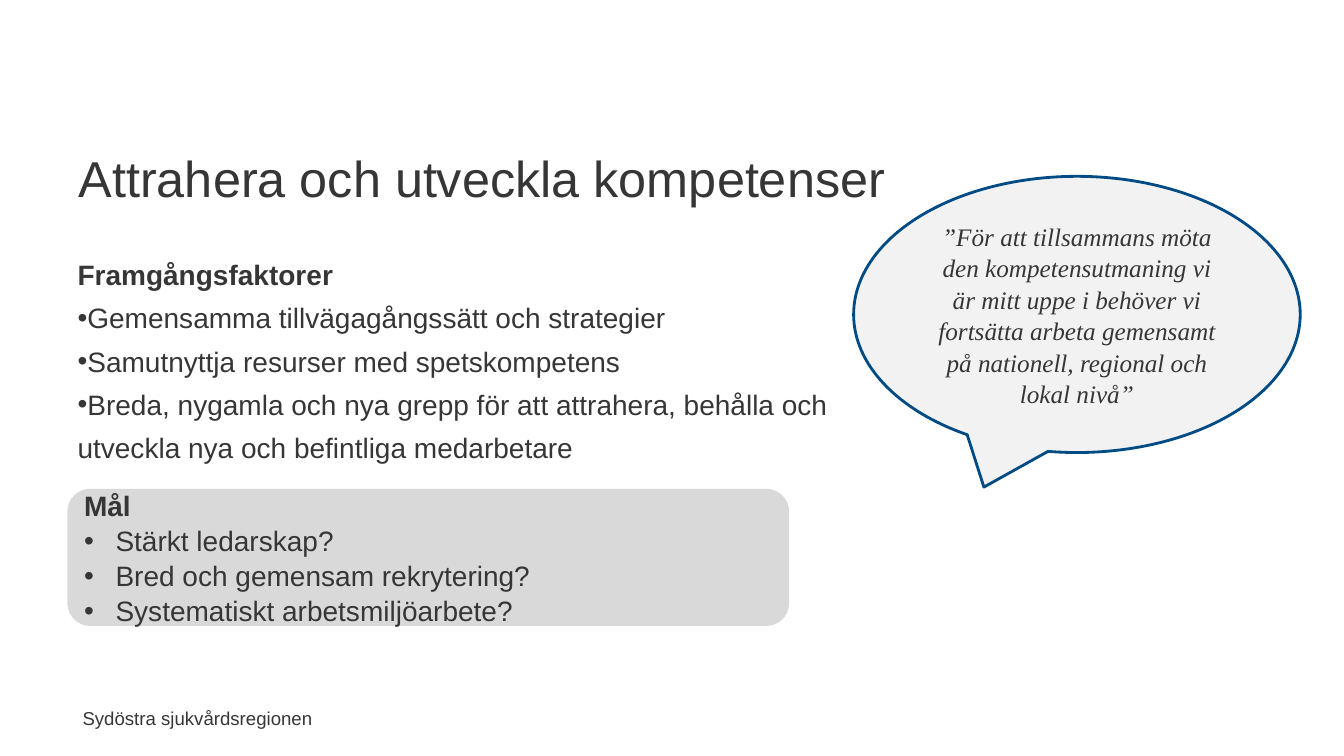
from dataclasses import dataclass
from typing import Optional

from lxml.etree import SubElement
from pptx import Presentation
from pptx.dml.color import RGBColor
from pptx.enum.shapes import MSO_SHAPE
from pptx.enum.text import MSO_ANCHOR, MSO_AUTO_SIZE, PP_ALIGN
from pptx.oxml.ns import qn
from pptx.util import Pt

COLORS = {"text": "363636", "goal": "D9D9D9", "quote": "F2F2F2", "outline": "004B84"}
BULLET_INDENT = 22.5


@dataclass
class Line:
    text: str
    size: float = 20
    font: str = "Arial"
    bold: bool = False
    italic: bool = False
    bullet: bool = False
    margin: float = 0
    level: int = 0
    after: float = 0
    spacing: float = 1.04
    align: PP_ALIGN = PP_ALIGN.LEFT


@dataclass
class Box:
    left: float
    top: float
    width: float
    height: float


@dataclass
class Panel:
    kind: MSO_SHAPE
    box: Box
    fill: str
    outline: Optional[str]
    lines: list[Line]


def color(name: str) -> RGBColor:
    return RGBColor.from_string(COLORS[name])


def place(sp, box: Box) -> None:
    sp.left, sp.top = Pt(box.left), Pt(box.top)
    sp.width, sp.height = Pt(box.width), Pt(box.height)


def set_bullet(p, line: Line) -> None:
    pPr = p._p.get_or_add_pPr()
    pPr.set("marL", str(Pt(line.margin)))
    pPr.set("indent", str(Pt(-BULLET_INDENT if line.bullet else 0)))
    if line.bullet:
        SubElement(pPr, qn("a:buFont")).set("typeface", "Arial")
        SubElement(pPr, qn("a:buChar")).set("char", "•")
    else:
        SubElement(pPr, qn("a:buNone"))


def write(tf, lines: list[Line], anchor: MSO_ANCHOR, wrap: bool = True) -> None:
    tf.word_wrap = wrap
    tf.auto_size = MSO_AUTO_SIZE.NONE
    tf.vertical_anchor = anchor
    for i, line in enumerate(lines):
        p = tf.paragraphs[0] if i == 0 else tf.add_paragraph()
        p.text = line.text
        p.level = line.level
        set_bullet(p, line)
        p.alignment = line.align
        p.line_spacing = line.spacing
        p.space_before, p.space_after = Pt(0), Pt(line.after)
        for r in p.runs:
            r.font.name, r.font.size = line.font, Pt(line.size)
            r.font.bold, r.font.italic = line.bold, line.italic
            r.font.color.rgb = color("text")


def add_panel(slide, panel: Panel) -> None:
    sp = slide.shapes.add_shape(panel.kind, 0, 0, 0, 0)
    place(sp, panel.box)
    sp.shadow.inherit = False
    sp.fill.solid()
    sp.fill.fore_color.rgb = color(panel.fill)
    if panel.outline:
        sp.line.color.rgb = color(panel.outline)
        sp.line.width = Pt(2)
    else:
        sp.line.fill.background()
    write(sp.text_frame, panel.lines, MSO_ANCHOR.MIDDLE)


def factor(text: str, bold: bool = False, bullet: bool = False) -> Line:
    return Line(text, bold=bold, bullet=bullet, level=1, after=6)


def goal(text: str) -> Line:
    return Line(text, bullet=True, margin=BULLET_INDENT)


FACTORS = [
    factor("Framgångsfaktorer", bold=True),
    factor("Gemensamma tillvägagångssätt och strategier", bullet=True),
    factor("Samutnyttja resurser med spetskompetens", bullet=True),
    factor("Breda, nygamla och nya grepp för att attrahera, behålla och", bullet=True),
    factor("utveckla nya och befintliga medarbetare"),
]
PANELS = [
    Panel(MSO_SHAPE.ROUNDED_RECTANGLE, Box(48.2, 349.2, 515.5, 97.9), "goal", None, [
        Line("Mål", bold=True),
        goal("Stärkt ledarskap?"),
        goal("Bred och gemensam rekrytering?"),
        goal("Systematiskt arbetsmiljöarbete?"),
    ]),
    Panel(MSO_SHAPE.OVAL_CALLOUT, Box(609.8, 126, 319, 197.3), "quote", "outline", [
        Line("”För att tillsammans möta den kompetensutmaning vi är mitt uppe i "
             "behöver vi fortsätta arbeta gemensamt på nationell, regional och "
             "lokal nivå”",
             size=18, font="Times New Roman", italic=True, align=PP_ALIGN.CENTER),
    ]),
]


def main() -> None:
    prs = Presentation()
    prs.slide_width, prs.slide_height = Pt(960), Pt(540)
    slide = prs.slides.add_slide(prs.slide_layouts[1])

    # Title and success factors
    title, body = slide.shapes.title, slide.placeholders[1]
    place(title, Box(49, 81.4, 864, 90))
    write(title.text_frame,
          [Line("Attrahera och utveckla kompetenser", size=36, spacing=1)],
          MSO_ANCHOR.MIDDLE)
    place(body, Box(48.2, 179.3, 864, 294.5))
    write(body.text_frame, FACTORS, MSO_ANCHOR.TOP)

    # Goals and quote
    for panel in PANELS:
        add_panel(slide, panel)

    # Region name at the foot
    footer = slide.shapes.add_textbox(Pt(50.4), Pt(501.1), Pt(180), Pt(23.8))
    write(footer.text_frame,
          [Line("Sydöstra sjukvårdsregionen", size=13.3, spacing=1,
                align=PP_ALIGN.RIGHT)],
          MSO_ANCHOR.TOP, wrap=False)

    prs.save("out.pptx")


if __name__ == "__main__":
    main()
